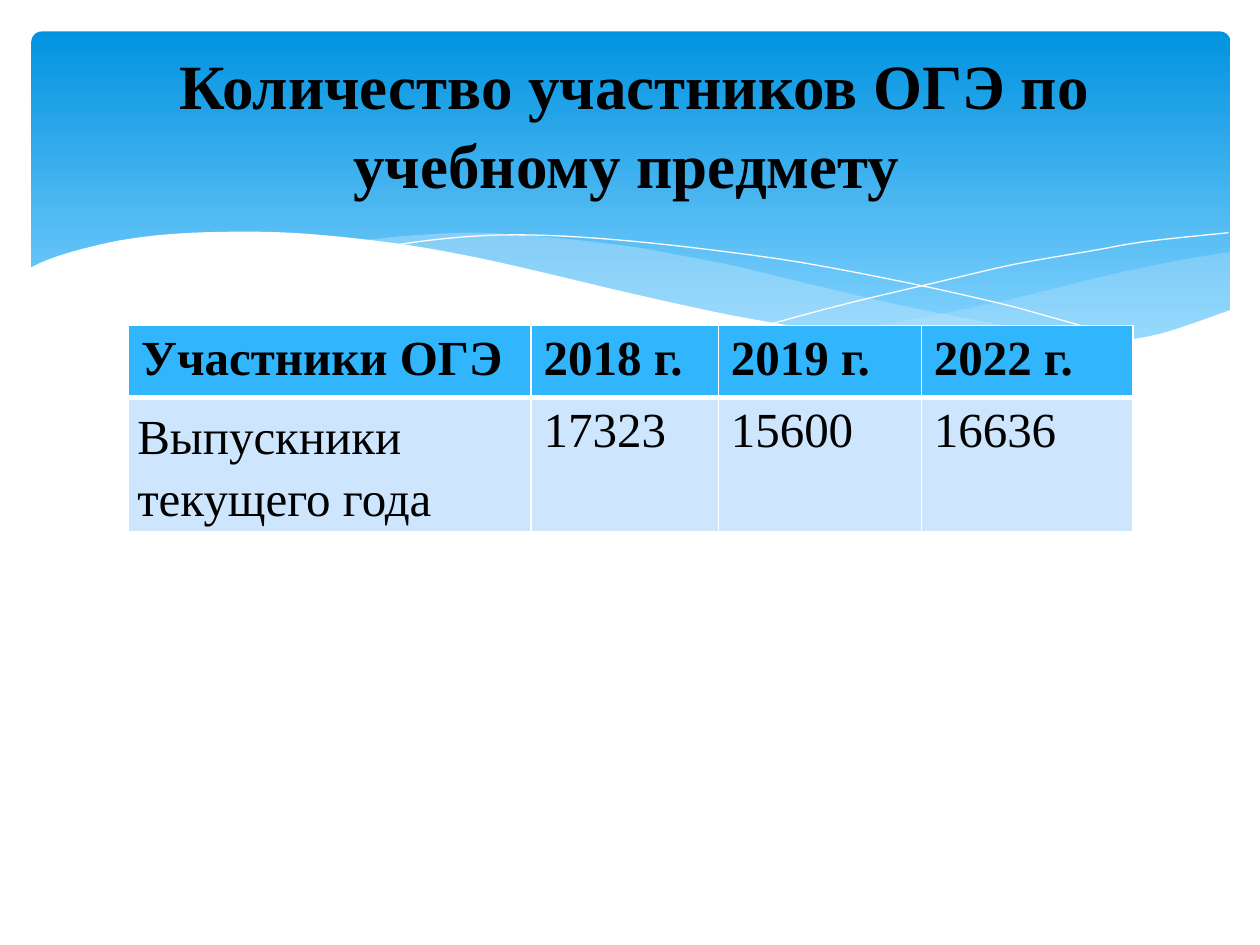
from lxml import etree
from pptx import Presentation
from pptx.dml.color import RGBColor
from pptx.enum.shapes import MSO_SHAPE
from pptx.enum.text import MSO_ANCHOR, MSO_AUTO_SIZE, PP_ALIGN
from pptx.oxml.ns import qn
from pptx.util import Pt

ROUNDED = MSO_SHAPE.ROUNDED_RECTANGLE
MIDDLE = MSO_ANCHOR.MIDDLE
NO_AUTOFIT = MSO_AUTO_SIZE.NONE
CENTER = PP_ALIGN.CENTER
TITLE_ONLY = 5
FONT = "Times New Roman"

# Wave edges, in points from the top left corner of the band
RIGHT_WAVE = [
    [(685, 126), (655, 131), (623, 137.5), (602, 142.5), (562, 152.5),
     (524, 160.5), (490, 167), (458, 173)],
    [(458, 173), (490, 177), (518, 180), (544, 181.5), (568, 182), (597, 181),
     (622, 178), (645, 173), (665, 167), (685, 160)],
]
MIDDLE_WAVE = [
    [(625, 178.5), (585, 173), (540, 165), (490, 155), (435, 142), (402, 134),
     (371, 128), (343, 123), (300, 118), (256, 115), (218, 116.5), (188, 119.5)],
    [(188, 119.5), (228, 125.5), (273, 134), (305, 142), (364, 155), (415, 165.5),
     (461, 173.5), (502, 179), (539, 181.5), (571, 182), (599, 181.5), (625, 178.5)],
]
FALLING_LINE = [
    [(204.5, 122.5), (230, 119), (261, 116.5), (294, 116.5), (334, 119), (382, 124),
     (440, 132), (505, 144.5), (554, 155.5), (580, 162.5), (635, 178)],
]
RISING_LINE = [
    [(423, 167), (466, 155.5), (521, 142.5), (562, 133), (605, 125.5),
     (637, 120), (684, 115)],
]
WHITE_WAVE = [
    [(685.5, 159), (666, 166), (644, 173), (621, 177), (594, 180), (564, 181.5),
     (530, 180), (492, 176.5), (449, 170.5), (399, 162), (344, 150), (304, 140.5),
     (263, 131), (227, 124), (192, 119), (148, 115), (109, 114.5), (77, 116),
     (50, 119.5), (24.5, 125.5), (8, 131), (-1.5, 135.5)],
    [(-1.5, 219), (685.5, 219)],
]


def color(value):
    return RGBColor.from_string(value)


def smooth_edge(knots, steps=4):
    """Run a Catmull-Rom curve through the knots."""
    padded = [knots[0], *knots, knots[-1]]
    points = [knots[0]]
    for a, b, c, d in zip(padded, padded[1:], padded[2:], padded[3:]):
        for step in range(1, steps + 1):
            t = step / steps
            points.append(tuple(
                (2 * q + (r - p) * t + (2 * p - 5 * q + 4 * r - s) * t ** 2
                 + (3 * q - p - 3 * r + s) * t ** 3) / 2
                for p, q, r, s in zip(a, b, c, d)))
    return points


def add_wave(page, box, edges, fill=None, opacity=100):
    """Draw a filled wave, or a thin white line when no fill is given."""
    left, top = box[:2]
    points = [(Pt(left + x), Pt(top + y))
              for edge in edges for x, y in smooth_edge(edge)]
    builder = page.shapes.build_freeform(*points[0])
    builder.add_line_segments(points[1:], close=fill is not None)
    wave = builder.convert_to_shape()
    wave.shadow.inherit = False
    if fill is None:
        wave.fill.background()
        wave.line.color.rgb = color("FFFFFF")
        wave.line.width = Pt(0)
        return
    wave.line.fill.background()
    wave.fill.solid()
    wave.fill.fore_color.rgb = color(fill)
    if opacity < 100:
        tone = wave._element.spPr.find(".//" + qn("a:srgbClr"))
        etree.SubElement(tone, qn("a:alpha"), val=str(opacity * 1000))


def add_band(page, box):
    # Gradient panel
    panel = page.shapes.add_shape(ROUNDED, *map(Pt, box))
    panel.shadow.inherit = False
    panel.adjustments[0] = 0.03
    panel.line.fill.background()
    panel.fill.gradient()
    panel.fill.gradient_angle = 270
    stops = [(0, "0293E0"), (0.9, "83D3FE")]
    for stop, (position, value) in zip(panel.fill.gradient_stops, stops):
        stop.position = position
        stop.color.rgb = color(value)

    # Waves, from back to front
    add_wave(page, box, RIGHT_WAVE, "C6E7FC", 29)
    add_wave(page, box, MIDDLE_WAVE, "C6E7FC", 40)
    add_wave(page, box, FALLING_LINE)
    add_wave(page, box, RISING_LINE)
    add_wave(page, box, WHITE_WAVE, "FFFFFF")


def format_paragraph(para, size, bold):
    para.font.name = FONT
    para.font.size = Pt(size)
    para.font.bold = bold
    para.font.color.rgb = color("000000")


def place_title(page, box, text):
    title = page.shapes.title
    title.left, title.top, title.width, title.height = map(Pt, box)
    frame = title.text_frame
    frame.text = text
    frame.word_wrap = True
    frame.auto_size = NO_AUTOFIT
    frame.vertical_anchor = MIDDLE
    para = frame.paragraphs[0]
    para.alignment = CENTER
    para.line_spacing = 1.05
    format_paragraph(para, 36, True)
    # Bring the title in front of the band
    page.shapes._spTree.append(title._element)


def set_borders(cell, widths):
    properties = cell._tc.get_or_add_tcPr()
    for index, (side, width) in enumerate(zip(("lnL", "lnR", "lnT", "lnB"), widths)):
        line = etree.Element(qn(f"a:{side}"), w=str(Pt(width)))
        fill = etree.SubElement(line, qn("a:solidFill"))
        etree.SubElement(fill, qn("a:srgbClr"), val="FFFFFF")
        properties.insert(index, line)


def add_participants_table(page, box, rows, column_widths, row_heights):
    table = page.shapes.add_table(
        len(rows), len(column_widths), *map(Pt, box)).table
    for column, width in zip(table.columns, column_widths):
        column.width = Pt(width)
    for row, height in zip(table.rows, row_heights):
        row.height = Pt(height)
    for row_index, values in enumerate(rows):
        header = row_index == 0
        for column_index, value in enumerate(values):
            cell = table.cell(row_index, column_index)
            cell.text = value
            cell.fill.solid()
            cell.fill.fore_color.rgb = color("31B6FD" if header else "CEE5FE")
            format_paragraph(cell.text_frame.paragraphs[0], 28, header)
            set_borders(cell, (1, 1, 1, 3) if header else (1, 1, 3, 1))

    # Row label with wider lines and tighter margins
    label = table.cell(1, 0)
    label.vertical_anchor = MIDDLE
    label.margin_left = label.margin_right = Pt(5)
    label.margin_top = label.margin_bottom = Pt(0)
    label.text_frame.paragraphs[0].line_spacing = 1.15


def main():
    deck = Presentation()
    deck.slide_width, deck.slide_height = Pt(720), Pt(540)
    page = deck.slides.add_slide(deck.slide_layouts[TITLE_ONLY])
    add_band(page, (18, 18, 685, 194.5))
    place_title(page, (22.5, 22.5, 680, 94.5),
                "Количество участников ОГЭ по учебному предмету ")
    add_participants_table(
        page, (73.5, 186, 574, 118),
        [("Участники ОГЭ", "2018 г.", "2019 г.", "2022 г."),
         ("Выпускники текущего года", "17323", "15600", "16636")],
        (230, 107, 116, 121), (41, 77))
    deck.save("out.pptx")


if __name__ == "__main__":
    main()
